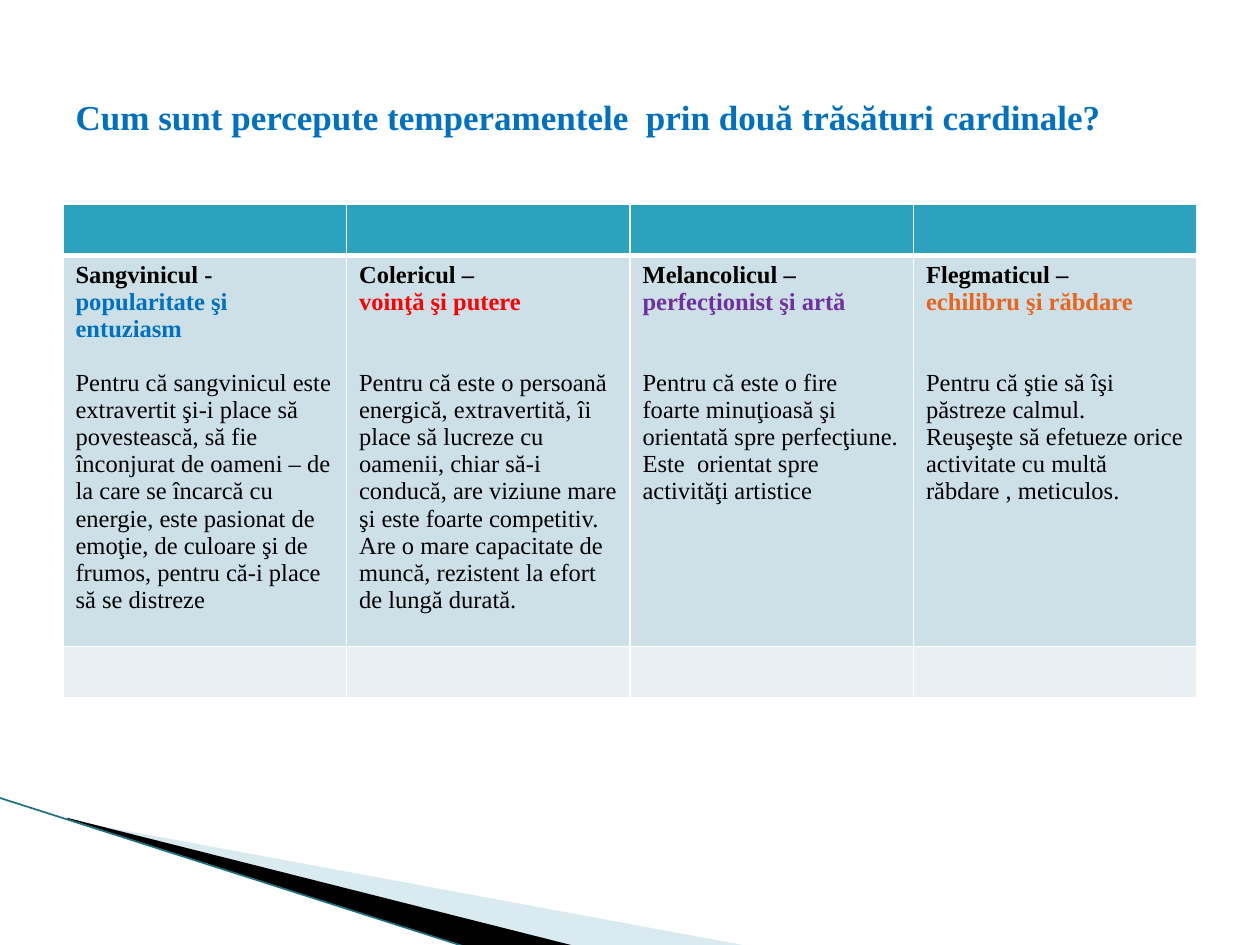
from typing import NamedTuple

from lxml.etree import SubElement
from pptx import Presentation
from pptx.dml.color import RGBColor
from pptx.enum.shapes import MSO_CONNECTOR
from pptx.enum.text import MSO_ANCHOR, PP_ALIGN
from pptx.oxml.ns import qn
from pptx.util import Emu, Inches, Pt

COLORS = {
    "white": "FFFFFF", "black": "000000", "blue": "0070C0", "red": "FF0000",
    "purple": "7030A0", "orange": "EB641B", "header": "2DA2BF",
    "band": "CDE0E8", "footer": "E8F0F4", "pale": "A0CBDC", "teal": "1B7183",
}
FONT = "Times New Roman"
WIDTH, HEIGHT = Inches(10), Inches(7.5)
MARGIN = 0.05          # share of the slide's width
LINE = 15.45           # height in points of one 14 pt line


class Temperament(NamedTuple):
    name: str
    traits: str
    trait_color: str
    reasons: tuple[str, ...]
    gap_lines: int = 2
    same_paragraph: bool = False


class Wedge(NamedTuple):
    points: tuple[tuple[float, float], ...]   # inches
    color: str
    opacity: int = 100


TEMPERAMENTS = (
    Temperament("Sangvinicul - ", "popularitate şi entuziasm", "blue", (
        "Pentru că sangvinicul este extravertit şi-i place să povestească, să fie "
        "înconjurat de oameni – de la care se încarcă cu energie, este pasionat de "
        "emoţie, de culoare şi de frumos, pentru că-i place să se distreze",
    ), gap_lines=1, same_paragraph=True),
    Temperament("Colericul –", "voinţă şi putere", "red", (
        "Pentru că este o persoană energică, extravertită, îi place să lucreze cu "
        "oamenii, chiar să-i conducă, are viziune mare şi este foarte competitiv.",
        "Are o mare capacitate de muncă, rezistent la efort de lungă durată.",
    )),
    Temperament("Melancolicul – ", "perfecţionist şi artă", "purple", (
        "Pentru că este o fire foarte minuţioasă şi orientată spre perfecţiune.",
        "Este  orientat spre activităţi artistice",
    ), same_paragraph=True),
    Temperament("Flegmaticul –", "echilibru şi răbdare", "orange", (
        "Pentru că ştie să îşi păstreze calmul.",
        "Reuşeşte să efetueze orice activitate cu multă răbdare , meticulos.",
    )),
)
WEDGES = (
    Wedge(((0.55, 6.51), (5.95, 7.51), (4.56, 7.51), (0.55, 6.5)), "pale", 40),
    Wedge(((0.53, 6.49), (4.57, 7.51), (3.72, 7.52), (0.54, 6.5)), "black"),
)


def across(share: float) -> Emu:
    return Emu(round(WIDTH * share))


def down(share: float) -> Emu:
    return Emu(round(HEIGHT * share))


def rgb(name: str) -> RGBColor:
    return RGBColor.from_string(COLORS[name])


def write(paragraph, text: str, *, size: float = 14, color: str = "black",
          bold: bool = False) -> None:
    run = paragraph.add_run()
    run.text = text
    run.font.name, run.font.size, run.font.bold = FONT, Pt(size), bold
    run.font.color.rgb = rgb(color)


def draw_wedge(slide, wedge: Wedge) -> None:
    start, *rest = [(Inches(x), Inches(y)) for x, y in wedge.points]
    builder = slide.shapes.build_freeform(*start)
    builder.add_line_segments(rest, close=True)
    shape = builder.convert_to_shape()
    shape.shadow.inherit = False
    shape.line.fill.background()
    shape.fill.solid()
    shape.fill.fore_color.rgb = rgb(wedge.color)
    if wedge.opacity < 100:
        tint = shape.fill._xPr.find(".//" + qn("a:srgbClr"))
        SubElement(tint, qn("a:alpha"), val=str(wedge.opacity * 1000))


def draw_edge(slide) -> None:
    edge = slide.shapes.add_connector(
        MSO_CONNECTOR.STRAIGHT, Inches(-0.01), Inches(6.33), Inches(3.71), Inches(7.52))
    edge.line.color.rgb = rgb("teal")
    edge.line.width = Pt(0.95)
    SubElement(edge._element.spPr, qn("a:effectLst"))


def style_cell(cell, fill: str, top: float = 1, bottom: float = 1) -> None:
    # Borders come before the fill in the cell properties
    properties = cell._tc.get_or_add_tcPr()
    for side, width in {"L": 1, "R": 1, "T": top, "B": bottom}.items():
        border = SubElement(properties, qn(f"a:ln{side}"), w=str(Pt(width)))
        solid = SubElement(border, qn("a:solidFill"))
        SubElement(solid, qn("a:srgbClr"), val=COLORS["white"])
    cell.fill.solid()
    cell.fill.fore_color.rgb = rgb(fill)


def fill_temperament(cell, temperament: Temperament) -> None:
    frame = cell.text_frame
    heading = frame.paragraphs[0]
    write(heading, temperament.name, bold=True)
    if not temperament.same_paragraph:
        heading = frame.add_paragraph()
    write(heading, temperament.traits, color=temperament.trait_color, bold=True)
    for index, reason in enumerate(temperament.reasons):
        paragraph = frame.add_paragraph()
        if index == 0:
            paragraph.space_before = Pt(temperament.gap_lines * LINE)
        write(paragraph, reason)


def draw_table(slide) -> None:
    row_shares = (0.054, 0.414, 0.054)
    columns = len(TEMPERAMENTS)
    table = slide.shapes.add_table(
        len(row_shares), columns, across(MARGIN), down(0.216),
        across(1 - 2 * MARGIN), down(sum(row_shares))).table
    for row, share in zip(table.rows, row_shares):
        row.height = down(share)
    for column, temperament in enumerate(TEMPERAMENTS):
        table.columns[column].width = across((1 - 2 * MARGIN) / columns)
        style_cell(table.cell(0, column), "header", bottom=3)
        style_cell(table.cell(1, column), "band", top=3)
        style_cell(table.cell(2, column), "footer")
        fill_temperament(table.cell(1, column), temperament)


def draw_title(slide) -> None:
    title = slide.shapes.title
    title.left, title.top = across(MARGIN), down(0.04)
    title.width, title.height = across(1 - 2 * MARGIN), down(1 / 6)
    frame = title.text_frame
    frame.word_wrap = True
    frame.vertical_anchor = MSO_ANCHOR.MIDDLE
    frame.paragraphs[0].alignment = PP_ALIGN.LEFT
    write(frame.paragraphs[0],
          "Cum sunt percepute temperamentele  prin două trăsături cardinale?",
          size=20, color="blue", bold=True)


def main() -> None:
    deck = Presentation()
    deck.slide_width, deck.slide_height = WIDTH, HEIGHT
    slide = deck.slides.add_slide(deck.slide_layouts[5])

    # Corner decoration
    for wedge in WEDGES:
        draw_wedge(slide, wedge)
    draw_edge(slide)

    # Content
    draw_table(slide)
    draw_title(slide)
    deck.save("out.pptx")


if __name__ == "__main__":
    main()
